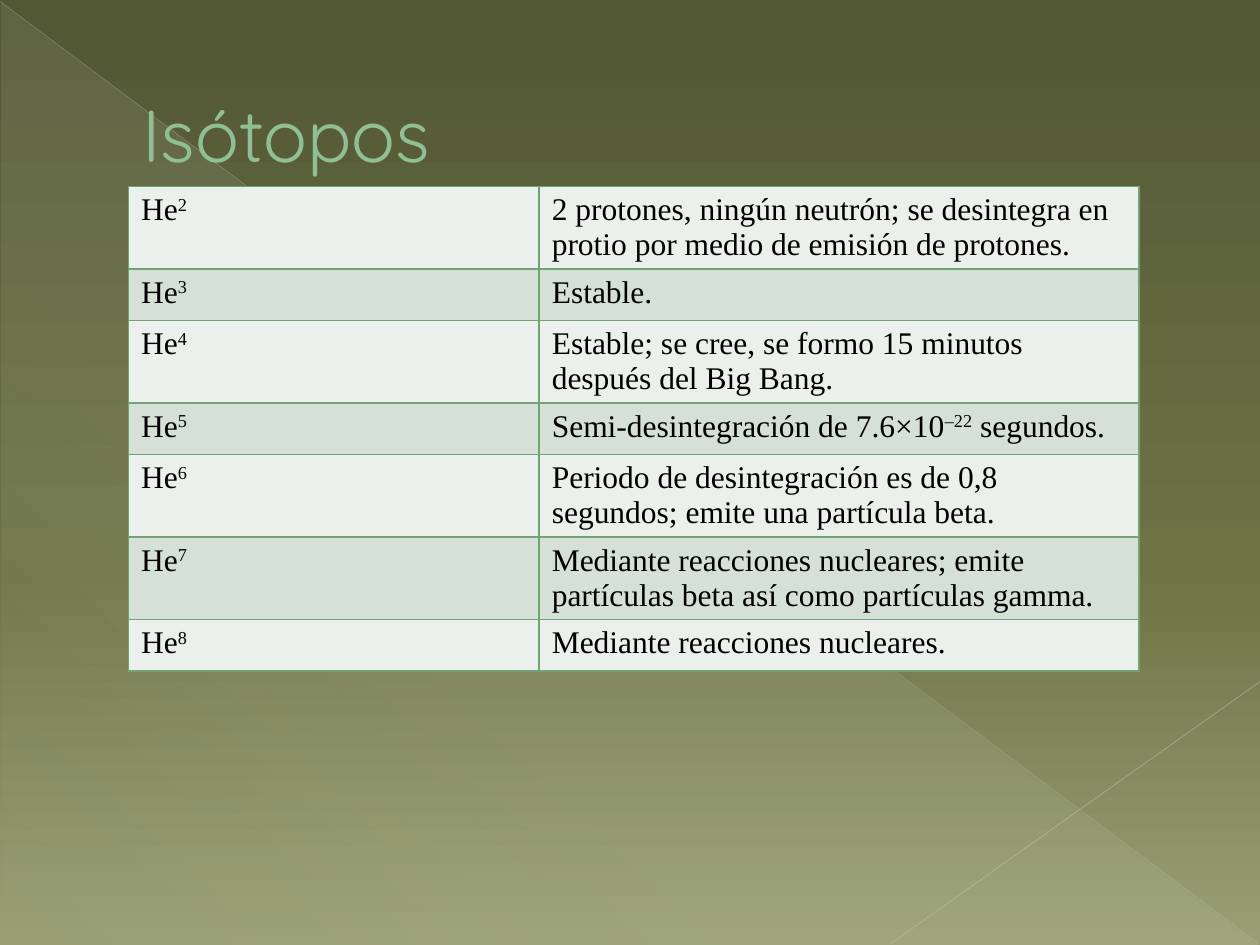
from typing import NamedTuple

from lxml.etree import SubElement
from pptx import Presentation
from pptx.dml.color import RGBColor
from pptx.enum.shapes import MSO_CONNECTOR, MSO_SHAPE
from pptx.enum.text import MSO_ANCHOR, PP_ALIGN
from pptx.oxml.ns import qn
from pptx.util import Cm, Pt

OLIVE_DARK = RGBColor(0x52, 0x57, 0x34)
OLIVE = RGBColor(0x6D, 0x73, 0x45)
OLIVE_LIGHT = RGBColor(0x99, 0x9F, 0x73)
CREAM = RGBColor(0xEA, 0xEB, 0xDE)
DIAGONAL_GREY = RGBColor(0xC1, 0xC3, 0xB9)
CORNER_GREY = RGBColor(0xC8, 0xC9, 0xC1)
TITLE_GREEN = RGBColor(0x8F, 0xBF, 0x93)
TITLE_OUTLINE = RGBColor(0x4F, 0x71, 0x52)
BORDER_GREEN = RGBColor(0x72, 0xA3, 0x76)
BAND_COLORS = (RGBColor(0xEB, 0xF0, 0xEC), RGBColor(0xD5, 0xE0, 0xD6))
BLACK = RGBColor(0, 0, 0)

ROW_HEIGHT = Cm(1.04)
COLUMN_WIDTHS = (Cm(8.28), Cm(12.09))
TITLE_FORMAT = {"name": "Quicksand", "size": Pt(42), "bold": False}
CELL_FORMAT = {"name": "Times New Roman", "size": Pt(18), "bold": False}


class Stop(NamedTuple):
    position: int
    color: RGBColor
    opacity: int = 100


class Ray(NamedTuple):
    start: tuple[float, float]
    end: tuple[float, float]
    color: RGBColor
    width: float
    opacity: int


class Isotope(NamedTuple):
    mass: int
    description: str  # text between carets is raised


RAYS = (
    Ray((0, 0.03), (25.37, 19.02), DIAGONAL_GREY, 0.39, 35),
    Ray((25.4, 13.74), (17.96, 19.02), CORNER_GREY, 0.47, 45),
)
ISOTOPES = (
    Isotope(2, "2 protones, ningún neutrón; se desintegra en protio por medio de emisión de protones."),
    Isotope(3, "Estable."),
    Isotope(4, "Estable; se cree, se formo 15 minutos después del Big Bang."),
    Isotope(5, "Semi-desintegración de 7.6×10^–22^ segundos."),
    Isotope(6, "Periodo de desintegración es de 0,8 segundos; emite una partícula beta."),
    Isotope(7, "Mediante reacciones nucleares; emite partículas beta así como partículas gamma."),
    Isotope(8, "Mediante reacciones nucleares."),
)


def add_color(parent, color: RGBColor, opacity: int = 100) -> None:
    element = SubElement(parent, qn("a:srgbClr"), val=str(color))
    if opacity < 100:
        SubElement(element, qn("a:alpha"), val=str(opacity * 1000))


def set_gradient(fill, stops: tuple[Stop, ...], angle: int, parent) -> None:
    fill.gradient()
    gradient = parent.find(qn("a:gradFill"))
    for child in list(gradient):
        gradient.remove(child)
    stop_list = SubElement(gradient, qn("a:gsLst"))
    for stop in stops:
        element = SubElement(stop_list, qn("a:gs"), pos=str(stop.position * 1000))
        add_color(element, stop.color, stop.opacity)
    SubElement(gradient, qn("a:lin"), ang=str(angle * 60000), scaled="0")


def add_outline(parent, tag: str, color: RGBColor, width: float) -> None:
    line = SubElement(parent, qn(tag), w=str(Pt(width)))
    add_color(SubElement(line, qn("a:solidFill")), color)


def apply_format(font, values: dict, color: RGBColor) -> None:
    for name, value in values.items():
        setattr(font, name, value)
    font.color.rgb = color


def draw_background(slide) -> None:
    background_fill = slide.background.fill
    stops = (Stop(0, OLIVE_DARK), Stop(60, OLIVE), Stop(100, OLIVE_LIGHT))
    set_gradient(background_fill, stops, 90, slide.element.cSld.bg.bgPr)

    triangle = slide.shapes.add_shape(
        MSO_SHAPE.RIGHT_TRIANGLE, Cm(0.03), Cm(0.05), Cm(25.35), Cm(19))
    triangle.shadow.inherit = False
    triangle.line.fill.background()
    stops = (Stop(0, CREAM, 10), Stop(70, CREAM, 8), Stop(100, CREAM, 1))
    set_gradient(triangle.fill, stops, 133, triangle.element.spPr)


def draw_ray(slide, ray: Ray) -> None:
    points = [Cm(value) for value in ray.start + ray.end]
    connector = slide.shapes.add_connector(MSO_CONNECTOR.STRAIGHT, *points)
    connector.line.width = Pt(ray.width)
    connector.line.color.rgb = ray.color
    color = connector.element.spPr.find(".//" + qn("a:srgbClr"))
    SubElement(color, qn("a:alpha"), val=str(ray.opacity * 1000))
    SubElement(connector.element.spPr, qn("a:effectLst"))


def draw_title(slide) -> None:
    title = slide.shapes.title
    title.left, title.top, title.width, title.height = Cm(1.27), Cm(0.74), Cm(22.86), Cm(3.89)
    title.text_frame.vertical_anchor = MSO_ANCHOR.MIDDLE
    paragraph = title.text_frame.paragraphs[0]
    paragraph.alignment = PP_ALIGN.LEFT
    properties = paragraph._p.get_or_add_pPr()
    properties.set("marL", str(Cm(1.35)))
    properties.set("indent", "0")
    run = paragraph.add_run()
    run.text = "Isótopos"
    # The outline comes before the fill and font in the run properties
    add_outline(run._r.get_or_add_rPr(), "a:ln", TITLE_OUTLINE, 0.5)
    apply_format(run.font, TITLE_FORMAT, TITLE_GREEN)


def fill_cell(cell, text: str, color: RGBColor) -> None:
    paragraph = cell.text_frame.paragraphs[0]
    for index, piece in enumerate(text.split("^")):
        if not piece:
            continue
        run = paragraph.add_run()
        run.text = piece
        apply_format(run.font, CELL_FORMAT, BLACK)
        if index % 2:
            run._r.get_or_add_rPr().set("baseline", "30000")
    # Borders come before the cell fill
    for tag in ("a:lnL", "a:lnR", "a:lnT", "a:lnB"):
        add_outline(cell._tc.get_or_add_tcPr(), tag, BORDER_GREEN, 1)
    cell.fill.solid()
    cell.fill.fore_color.rgb = color


def draw_table(slide) -> None:
    frame = slide.shapes.add_table(
        len(ISOTOPES), 2, Cm(2.59), Cm(3.76), sum(COLUMN_WIDTHS), Cm(10.21))
    table = frame.table
    table.first_row = False
    for column, width in zip(table.columns, COLUMN_WIDTHS):
        column.width = width
    for index, isotope in enumerate(ISOTOPES):
        table.rows[index].height = ROW_HEIGHT
        color = BAND_COLORS[index % 2]
        fill_cell(table.cell(index, 0), f"He^{isotope.mass}", color)
        fill_cell(table.cell(index, 1), isotope.description, color)
    frame.height = Cm(10.21)


def main() -> None:
    presentation = Presentation()
    presentation.slide_width, presentation.slide_height = Cm(25.4), Cm(19.05)
    slide = presentation.slides.add_slide(presentation.slide_layouts[5])

    # Backdrop
    draw_background(slide)
    for ray in RAYS:
        draw_ray(slide, ray)

    # Content, with the title raised above the backdrop
    draw_title(slide)
    slide.shapes._spTree.append(slide.shapes.title.element)
    draw_table(slide)

    presentation.save("out.pptx")


if __name__ == "__main__":
    main()
